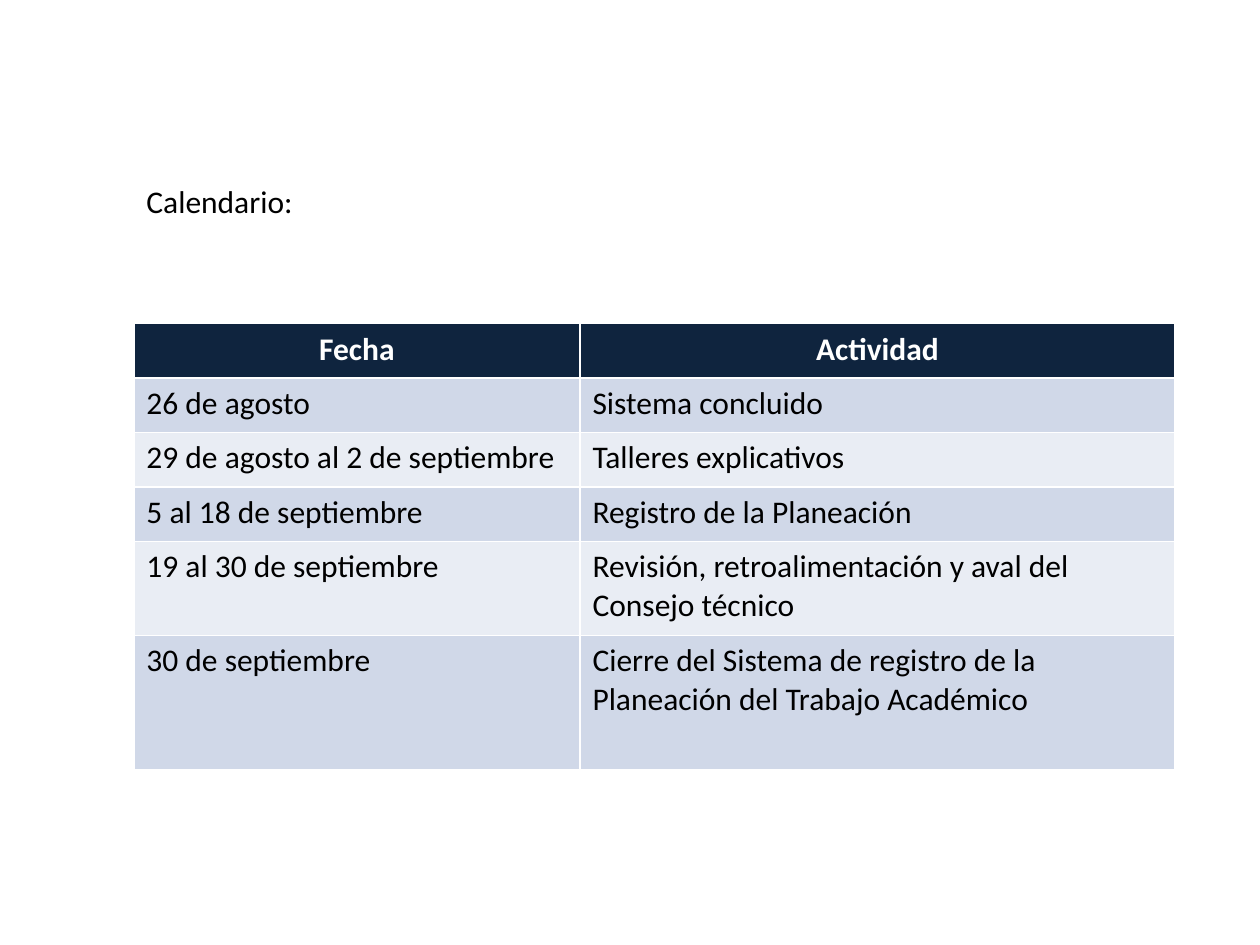
"""Build a slide with a calendar of activities in a two-column table."""
from pptx import Presentation
from pptx.dml.color import RGBColor
from pptx.enum.text import MSO_ANCHOR, PP_ALIGN
from pptx.util import Pt

NAVY = RGBColor(0x0F, 0x24, 0x3E)
BLUE = RGBColor(0xD0, 0xD8, 0xE8)
PALE = RGBColor(0xE9, 0xED, 0xF4)
WHITE = RGBColor(0xFF, 0xFF, 0xFF)
BLACK = RGBColor(0x00, 0x00, 0x00)

ROWS = [
    ("Fecha", "Actividad"),
    ("26 de agosto", "Sistema concluido"),
    ("29 de agosto al 2 de septiembre", "Talleres explicativos"),
    ("5 al 18 de septiembre", "Registro de la Planeación"),
    ("19 al 30 de septiembre", "Revisión, retroalimentación y aval del Consejo técnico"),
    ("30 de septiembre", "Cierre del Sistema de registro de la Planeación del Trabajo Académico"),
]
WIDTHS = [254.9, 340.1]
HEIGHTS = [31.1, 31.1, 31.1, 31.1, 53.8, 76.8]
LEFT = 76.5


def format_text(p, color, bold, align):
    p.alignment = align
    for r in p.runs:
        r.font.name = "Calibri"
        r.font.size = Pt(18)
        r.font.bold = bold
        r.font.color.rgb = color


prs = Presentation()
prs.slide_width, prs.slide_height = Pt(720), Pt(540)
s = prs.slides.add_slide(prs.slide_layouts[5])

title = s.shapes.title
title.left, title.top, title.width, title.height = Pt(LEFT), Pt(100.2), Pt(567.4), Pt(29.1)
tf = title.text_frame
tf.text = "Calendario:"
tf.vertical_anchor = MSO_ANCHOR.TOP
format_text(tf.paragraphs[0], BLACK, False, PP_ALIGN.LEFT)

table = s.shapes.add_table(
    len(ROWS), len(WIDTHS), Pt(LEFT), Pt(185), Pt(sum(WIDTHS)), Pt(sum(HEIGHTS))
).table
for col, width in zip(table.columns, WIDTHS):
    col.width = Pt(width)

for i, (texts, height) in enumerate(zip(ROWS, HEIGHTS)):
    table.rows[i].height = Pt(height)
    header = i == 0
    fill = NAVY if header else BLUE if i % 2 else PALE
    for j, text in enumerate(texts):
        cell = table.cell(i, j)
        cell.text_frame.text = text
        cell.fill.solid()
        cell.fill.fore_color.rgb = fill
        format_text(
            cell.text_frame.paragraphs[0],
            WHITE if header else BLACK,
            header,
            PP_ALIGN.CENTER if header else PP_ALIGN.LEFT,
        )

prs.save("out.pptx")
